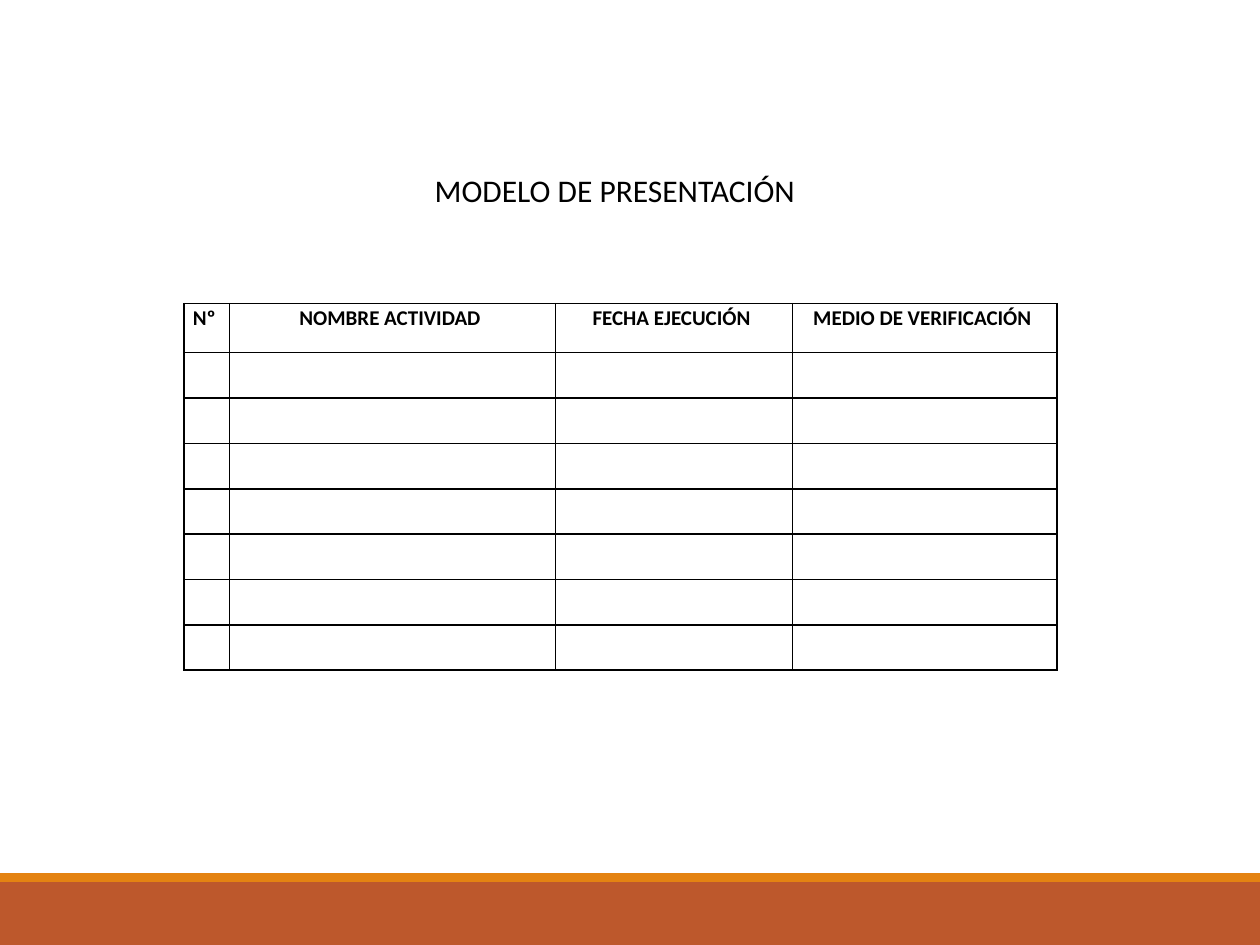
"""Build the activity log model slide with its blank table."""
from dataclasses import dataclass

import lxml.etree
import pptx
import pptx.dml.color
import pptx.enum.shapes
import pptx.enum.text
import pptx.oxml.ns
import pptx.util

Pt = pptx.util.Pt
BLACK = "000000"
BLANK_ROWS = 7
HEADER_HEIGHT, ROW_HEIGHT = 28.08, 25.92


@dataclass
class Band:
    top: float
    height: float
    color: str


@dataclass
class Column:
    heading: str
    width: float


BANDS = [Band(504, 36, "BD582C"), Band(499, 5, "E48312")]
COLUMNS = [
    Column("Nº ", 25.92),
    Column("NOMBRE ACTIVIDAD ", 186.48),
    Column("FECHA EJECUCIÓN ", 135.36),
    Column("MEDIO DE VERIFICACIÓN ", 151.2),
]


def rgb(color: str) -> pptx.dml.color.RGBColor:
    return pptx.dml.color.RGBColor.from_string(color)


def style_paragraph(paragraph, size: float, bold: bool, alignment) -> None:
    paragraph.alignment = alignment
    paragraph.font.name = "Calibri"
    paragraph.font.size = Pt(size)
    paragraph.font.bold = bold
    paragraph.font.color.rgb = rgb(BLACK)


def draw_band(slide, band: Band, width: int) -> None:
    stripe = slide.shapes.add_shape(
        pptx.enum.shapes.MSO_SHAPE.RECTANGLE, 0, Pt(band.top), width, Pt(band.height)
    )
    stripe.shadow.inherit = False
    stripe.fill.solid()
    stripe.fill.fore_color.rgb = rgb(band.color)
    stripe.line.fill.background()


def add_borders(cell, color: str, width: float) -> None:
    qn = pptx.oxml.ns.qn
    properties = cell._tc.get_or_add_tcPr()
    for side in ("lnL", "lnR", "lnT", "lnB"):
        border = lxml.etree.SubElement(properties, qn(f"a:{side}"), w=str(Pt(width)))
        fill = lxml.etree.SubElement(border, qn("a:solidFill"))
        lxml.etree.SubElement(fill, qn("a:srgbClr"), val=color)


def format_cell(cell) -> None:
    add_borders(cell, BLACK, 1)
    cell.fill.background()
    cell.margin_left = cell.margin_right = Pt(5)
    cell.margin_top = cell.margin_bottom = 0
    paragraph = cell.text_frame.paragraphs[0]
    style_paragraph(paragraph, 12, True, pptx.enum.text.PP_ALIGN.CENTER)
    paragraph.line_spacing = 1.07


def draw_activities(slide, columns: list[Column]) -> None:
    width = sum(column.width for column in columns)
    height = HEADER_HEIGHT + BLANK_ROWS * ROW_HEIGHT
    activities = slide.shapes.add_table(
        BLANK_ROWS + 1, len(columns), Pt(105.12), Pt(173.52), Pt(width), Pt(height)
    ).table
    activities.first_row = False
    activities.horz_banding = False
    for row in activities.rows:
        row.height = Pt(ROW_HEIGHT)
    activities.rows[0].height = Pt(HEADER_HEIGHT)
    for index, column in enumerate(columns):
        activities.columns[index].width = Pt(column.width)
        activities.cell(0, index).text = column.heading
    for cell in activities.iter_cells():
        format_cell(cell)


def write_title(slide) -> None:
    title = slide.shapes.title
    title.left, title.top, title.width, title.height = Pt(241.2), Pt(94.32), Pt(222.48), Pt(29)
    title.text = "MODELO DE PRESENTACIÓN"
    frame = title.text_frame
    frame.word_wrap = False
    frame.auto_size = pptx.enum.text.MSO_AUTO_SIZE.SHAPE_TO_FIT_TEXT
    frame.vertical_anchor = pptx.enum.text.MSO_ANCHOR.TOP
    style_paragraph(frame.paragraphs[0], 18, False, pptx.enum.text.PP_ALIGN.LEFT)


def main() -> None:
    presentation = pptx.Presentation()
    presentation.slide_width, presentation.slide_height = Pt(720), Pt(540)
    slide = presentation.slides.add_slide(presentation.slide_layouts[5])
    for band in BANDS:
        draw_band(slide, band, presentation.slide_width)
    draw_activities(slide, COLUMNS)
    write_title(slide)
    presentation.save("out.pptx")


if __name__ == "__main__":
    main()
